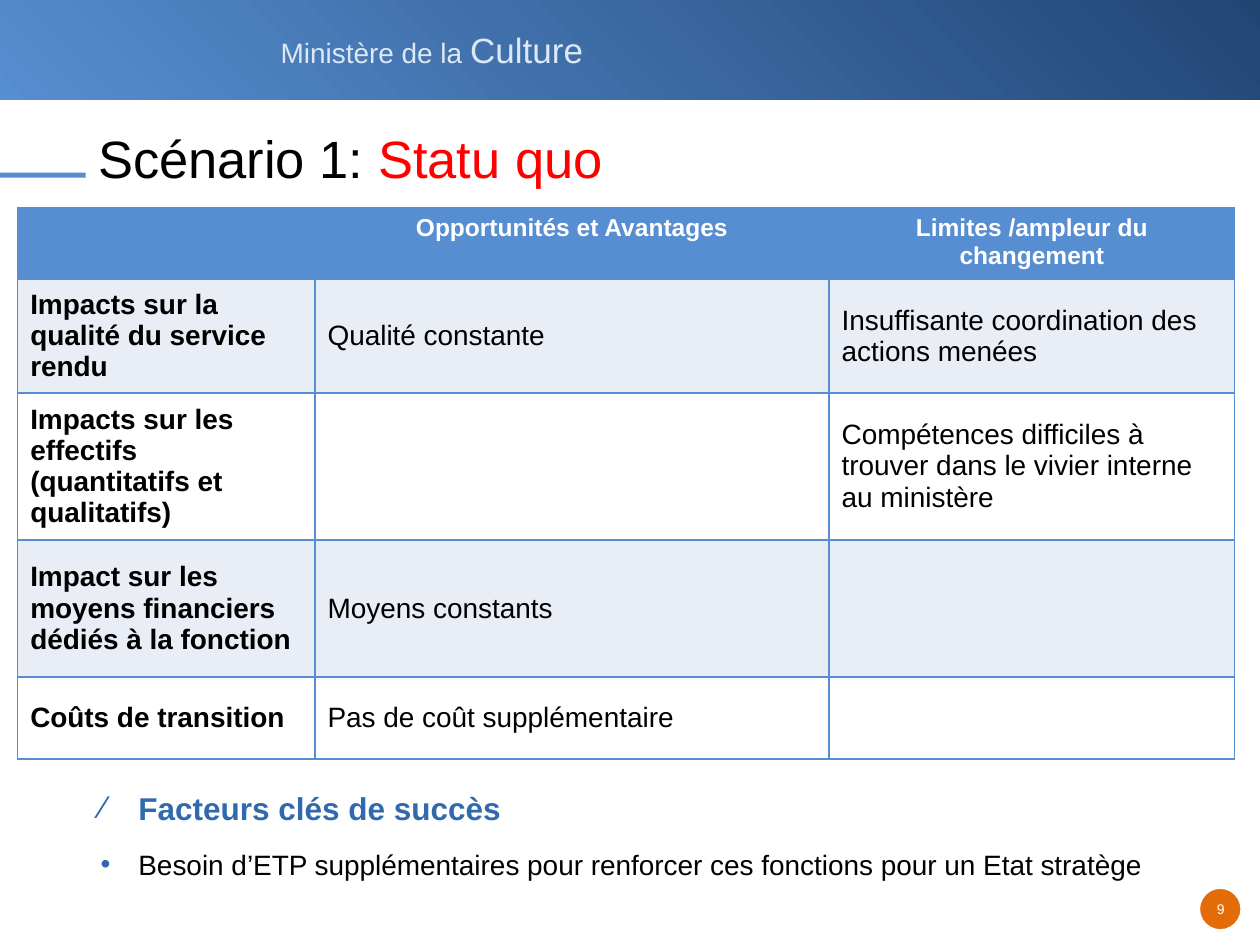
from lxml.etree import SubElement
from pptx import Presentation
from pptx.dml.color import RGBColor
from pptx.enum.shapes import MSO_SHAPE as Shape
from pptx.enum.text import MSO_ANCHOR as Anchor, PP_ALIGN as Align
from pptx.oxml.ns import qn
from pptx.util import Inches, Pt

THEME = {
    "font": "Arial",
    "blue": "578ED1", "navy": "204674", "accent": "3069AE", "pale": "DDE8F6",
    "band": "E9EDF6", "white": "FFFFFF", "black": "000000", "red": "FF0000",
    "orange": "E36C09",
    "title": 30, "ministry": 20, "heading": 18, "body": 16, "header": 14, "number": 8,
}

MINISTRY = [("Ministère de la ", "body", "pale"), ("Culture", "ministry", "pale")]
TITLE = [("Scénario 1: ", "title", "black"), ("Statu quo", "title", "red")]
PAGE_NUMBER = [("9", "number", "white")]
ROWS = [
    ("", "Opportunités et Avantages", "Limites /ampleur du changement"),
    ("Impacts sur la qualité du service rendu", "Qualité constante",
     "Insuffisante coordination des actions menées"),
    ("Impacts sur les effectifs (quantitatifs et qualitatifs)", "",
     "Compétences difficiles à trouver dans le vivier interne au ministère"),
    ("Impact sur les moyens financiers dédiés à la fonction", "Moyens constants", ""),
    ("Coûts de transition", "Pas de coût supplémentaire", ""),
]
COLUMN_WIDTHS = [2.36, 4.08, 3.22]
ROW_HEIGHTS = [0.53, 0.84, 1.12, 1.09, 0.65]
SUCCESS_FACTORS = [
    ("⁄", "Facteurs clés de succès", "heading", "accent", True, 12),
    ("•", "Besoin d’ETP supplémentaires pour renforcer ces fonctions pour un Etat stratège",
     "body", "black", False, 3),
]


def color(name):
    return RGBColor.from_string(THEME[name])


def style(font, size, tint, bold=False):
    font.name = THEME["font"]
    font.size = Pt(THEME[size])
    font.bold = bold
    font.color.rgb = color(tint)


def add_block(page, kind, place, fill=None):
    block = page.shapes.add_shape(kind, *map(Inches, place))
    block.shadow.inherit = False
    block.line.fill.background()
    if fill:
        block.fill.solid()
        block.fill.fore_color.rgb = color(fill)
    return block


def add_box(page, place, wrap=True):
    frame = page.shapes.add_textbox(*map(Inches, place)).text_frame
    frame.word_wrap = wrap
    return frame


def add_spans(para, spans):
    for text, size, tint in spans:
        span = para.add_run()
        span.text = text
        style(span.font, size, tint)


def add_bullet(para, symbol):
    props = para._p.get_or_add_pPr()
    props.set("marL", str(Inches(0.3)))
    props.set("indent", str(-Inches(0.3)))
    tint = SubElement(props, qn("a:buClr"))
    SubElement(tint, qn("a:srgbClr"), val=THEME["accent"])
    SubElement(props, qn("a:buFont"), typeface=THEME["font"])
    SubElement(props, qn("a:buChar"), char=symbol)


def add_borders(cell):
    props = cell._tc.get_or_add_tcPr()
    for side in ("lnL", "lnR", "lnT", "lnB"):
        border = SubElement(props, qn(f"a:{side}"), w=str(Pt(0.96)))
        fill = SubElement(border, qn("a:solidFill"))
        SubElement(fill, qn("a:srgbClr"), val=THEME["blue"])


def add_banner(page):
    banner = add_block(page, Shape.RECTANGLE, (0, 0, 10, 0.79))
    banner.fill.gradient()
    banner.fill.gradient_angle = 225
    for stop, name, position in zip(banner.fill.gradient_stops, ("navy", "blue"), (0, 1)):
        stop.color.rgb = color(name)
        stop.position = position
    add_spans(add_box(page, (2.13, 0.18, 2.6, 0.43), wrap=False).paragraphs[0], MINISTRY)


def add_title(page):
    add_block(page, Shape.RECTANGLE, (0, 1.37, 0.68, 0.04), "blue")
    para = add_box(page, (0.68, 1.06, 8.88, 0.81)).paragraphs[0]
    para.line_spacing = Pt(28)
    add_spans(para, TITLE)


def add_page_number(page):
    badge = add_block(page, Shape.OVAL, (9.52, 7.05, 0.33, 0.33), "orange")
    badge.line.color.rgb = color("white")
    badge.line.width = Pt(0.75)
    frame = add_box(page, (9.39, 7.1, 0.6, 0.23), wrap=False)
    frame.margin_left = frame.margin_right = Inches(0.05)
    frame.paragraphs[0].alignment = Align.CENTER
    add_spans(frame.paragraphs[0], PAGE_NUMBER)


def add_impacts(page):
    place = (0.14, 1.65, sum(COLUMN_WIDTHS), sum(ROW_HEIGHTS))
    table = page.shapes.add_table(len(ROWS), len(COLUMN_WIDTHS), *map(Inches, place)).table
    for column, width in zip(table.columns, COLUMN_WIDTHS):
        column.width = Inches(width)
    for row, height in zip(table.rows, ROW_HEIGHTS):
        row.height = Inches(height)
    for r, texts in enumerate(ROWS):
        is_header = r == 0
        fill = "blue" if is_header else "band" if r % 2 else "white"
        for c, text in enumerate(texts):
            cell = table.cell(r, c)
            add_borders(cell)
            cell.fill.solid()
            cell.fill.fore_color.rgb = color(fill)
            cell.vertical_anchor = Anchor.TOP if is_header else Anchor.MIDDLE
            cell.text_frame.text = text
            para = cell.text_frame.paragraphs[0]
            para.alignment = Align.CENTER if is_header else Align.LEFT
            for span in para.runs:
                if is_header:
                    style(span.font, "header", "white", True)
                else:
                    style(span.font, "body", "black", c == 0)


def add_success_factors(page):
    frame = add_box(page, (0.7, 6.21, 8.88, 1.23))
    frame.text = "\n".join(text for _, text, *_ in SUCCESS_FACTORS)
    for para, factor in zip(frame.paragraphs, SUCCESS_FACTORS):
        symbol, _, size, tint, bold, space_after = factor
        para.space_after = Pt(space_after)
        add_bullet(para, symbol)
        style(para.runs[0].font, size, tint, bold)


def main():
    deck = Presentation()
    deck.slide_width, deck.slide_height = Inches(10), Inches(7.5)
    page = deck.slides.add_slide(deck.slide_layouts[6])
    add_banner(page)
    add_title(page)
    add_page_number(page)
    add_impacts(page)
    add_success_factors(page)
    deck.save("out.pptx")


if __name__ == "__main__":
    main()
